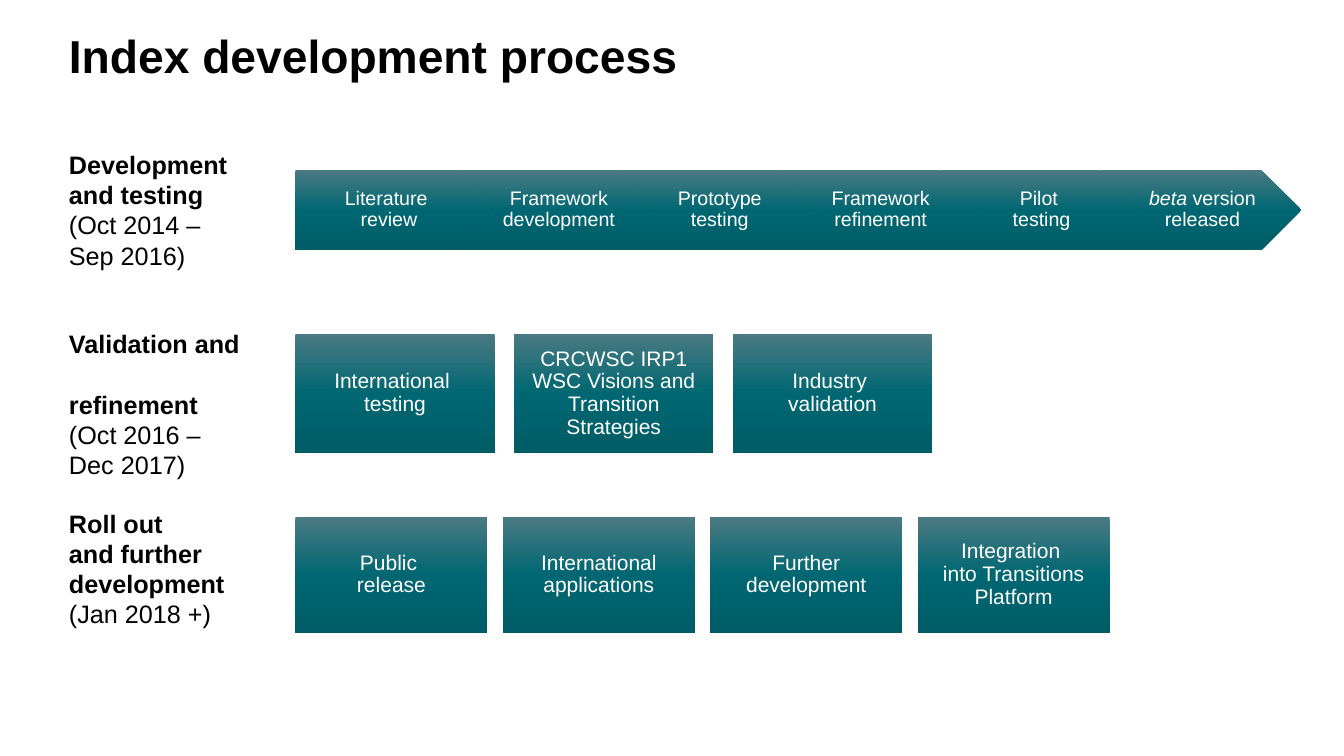
from copy import deepcopy
from dataclasses import dataclass
from typing import Any

from pptx import Presentation
from pptx.dml.color import RGBColor as Rgb
from pptx.enum.shapes import MSO_SHAPE as Shape
from pptx.enum.text import MSO_ANCHOR as Anchor, MSO_AUTO_SIZE as Fit, PP_ALIGN as Align
from pptx.oxml.ns import qn
from pptx.util import Pt

COLOURS = {"text": "000000", "step_text": "FFFFFF",
           "top": "4B7A83", "middle": "006772", "bottom": "005C65"}


@dataclass
class ProcessSlide:
    page: Any
    font: str = "Arial"

    def add_runs(self, para, runs, size, colour):
        """Add (text, style) runs; a newline in the text is a line break."""
        for text, style in runs:
            for index, line in enumerate(text.split("\n")):
                if index:
                    para.add_line_break()
                    para._p[-1].append(deepcopy(span._r.rPr))
                if not line:
                    continue
                span = para.add_run()
                span.text = line
                span.font.name = self.font
                span.font.size = Pt(size)
                span.font.bold = style == "bold"
                span.font.italic = style == "italic"
                span.font.color.rgb = Rgb.from_string(COLOURS[colour])

    def shade(self, box):
        """Fill from top to bottom with three colour stops."""
        box.fill.gradient()
        box.fill.gradient_angle = 270
        stops = box._element.spPr.find(qn("a:gradFill"))[0]
        stops.append(deepcopy(stops[-1]))
        for stop, name, place in zip(box.fill.gradient_stops,
                                     ("top", "middle", "bottom"), (0, 0.5, 1)):
            stop.color.rgb = Rgb.from_string(COLOURS[name])
            stop.position = place

    def step(self, kind, left, top, width, height, runs, size, insets):
        box = self.page.shapes.add_shape(kind, Pt(left), Pt(top), Pt(width), Pt(height))
        box.shadow.inherit = False
        box.line.fill.background()
        self.shade(box)
        frame = box.text_frame
        frame.word_wrap = True
        frame.vertical_anchor = Anchor.MIDDLE
        (frame.margin_left, frame.margin_top,
         frame.margin_right, frame.margin_bottom) = map(Pt, insets)
        para = frame.paragraphs[0]
        para.alignment = Align.CENTER
        para.line_spacing = 0.9
        self.add_runs(para, runs, size, "step_text")

    def label(self, top, width, height, paragraphs, size=36, wrap=False):
        box = self.page.shapes.add_textbox(Pt(91.4), Pt(top), Pt(width), Pt(height))
        frame = box.text_frame
        frame.word_wrap = wrap
        frame.auto_size = Fit.SHAPE_TO_FIT_TEXT
        for index, runs in enumerate(paragraphs):
            para = frame.add_paragraph() if index else frame.paragraphs[0]
            self.add_runs(para, runs, size, "text")


def main():
    deck = Presentation()
    deck.slide_width, deck.slide_height = Pt(1919.52), Pt(1080)
    slide = ProcessSlide(deck.slides.add_slide(deck.slide_layouts[6]))
    row_left = 421.9

    # Development arrow: interlocking chevrons
    phases = [
        [("Literature \nreview", "")],
        [("Framework development", "")],
        [("Prototype testing", "")],
        [("Framework refinement", "")],
        [("Pilot \ntesting", "")],
        [("beta ", "italic"), ("version released", "")],
    ]
    for index, runs in enumerate(phases):
        kind = Shape.CHEVRON if index else Shape.PENTAGON
        inset_left = 8.4 if index else 11.2
        slide.step(kind, row_left + index * 229.8, 242.6, 287.3, 114.9,
                   runs, 28, (inset_left, 5.6, 2.8, 5.6))

    # Validation and roll-out rows: top, width, height, pitch, texts
    rows = [
        (476.6, 284.4, 170.6, 312.5,
         ["International \ntesting",
          "CRCWSC IRP1 WSC Visions and Transition Strategies",
          "Industry \nvalidation"]),
        (738.7, 274.3, 164.9, 296.2,
         ["Public \nrelease", "International applications",
          "Further development", "Integration \ninto Transitions Platform"]),
    ]
    for top, width, height, pitch, texts in rows:
        for index, text in enumerate(texts):
            slide.step(Shape.RECTANGLE, row_left + index * pitch, top, width, height,
                       [(text, "")], 30, (8.4,) * 4)

    # Row labels
    slide.label(209.5, 254.2, 181.4,
                [[("Development \nand testing \n", "bold"),
                  ("(Oct 2014 – \nSep 2016)", "")]], wrap=True)
    slide.label(465.8, 260.6, 181.4,
                [[("Validation and \nrefinement", "bold")],
                 [("(Oct 2016 – \nDec 2017)", "")]])
    slide.label(722.2, 239, 181.4,
                [[("Roll out \nand further \ndevelopment", "bold")],
                 [("(Jan 2018 +)", "")]])

    # Title
    slide.label(36, 893.5, 87.1, [[("Index development process", "bold")]], size=66)

    deck.save("out.pptx")


if __name__ == "__main__":
    main()
